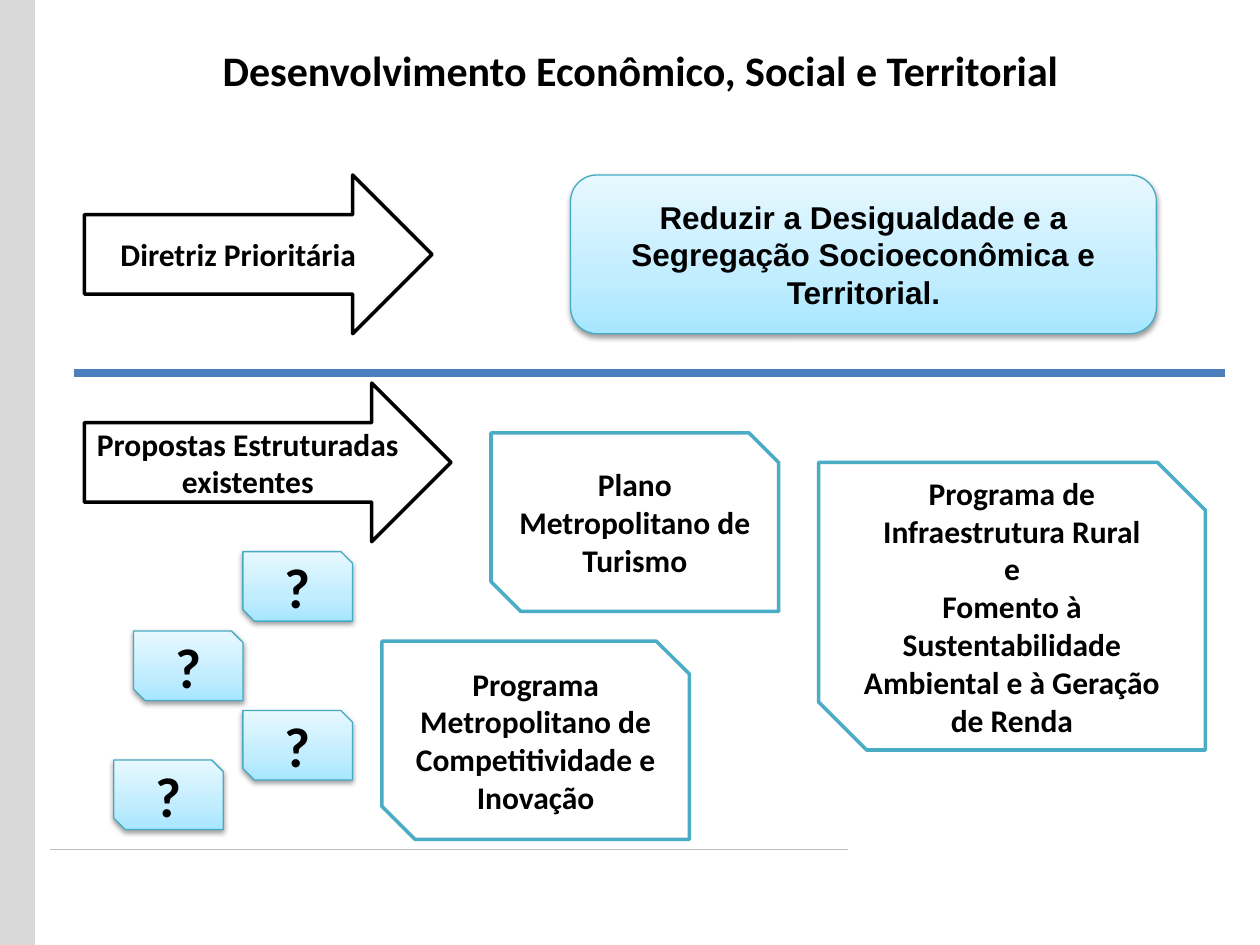
from copy import deepcopy

from lxml.etree import SubElement
from pptx import Presentation
from pptx.dml.color import RGBColor
from pptx.enum.shapes import MSO_CONNECTOR, MSO_SHAPE
from pptx.enum.text import MSO_ANCHOR, MSO_AUTO_SIZE, PP_ALIGN
from pptx.oxml.ns import qn
from pptx.util import Pt

STOPS = [(0, "A7E6FF"), (0.35, "C1EDFF"), (1, "E7F8FF")]
SNIP = MSO_SHAPE.SNIP_2_DIAG_RECTANGLE
ARROW = MSO_SHAPE.RIGHT_ARROW


def color(code):
    return RGBColor.from_string(code)


def write(frame, text, size=18, font="Calibri", anchor=MSO_ANCHOR.MIDDLE):
    """Put bold, centred text in a frame, one paragraph per line."""
    frame.word_wrap = True
    frame.auto_size = MSO_AUTO_SIZE.NONE
    frame.vertical_anchor = anchor
    frame.text = text
    for para in frame.paragraphs:
        para.alignment = PP_ALIGN.CENTER
        para.font.size = Pt(size)
        para.font.name = font
        para.font.bold = True
        para.font.color.rgb = color("000000")


def add_box(slide, kind, area, fill="FFFFFF", line=None, width=2):
    box = slide.shapes.add_shape(kind, *map(Pt, area))
    box.shadow.inherit = False
    box.fill.solid()
    box.fill.fore_color.rgb = color(fill)
    if line:
        box.line.color.rgb = color(line)
        box.line.width = Pt(width)
    else:
        box.line.fill.background()
    return box


def add_glow(slide, kind, area):
    """Add a box with a blue gradient and a soft shadow below it."""
    box = add_box(slide, kind, area, line="46AAC5", width=0.75)
    box.fill.gradient()
    box.fill.gradient_angle = 90
    first = box.fill.gradient_stops[0]._gs
    first.addnext(deepcopy(first))
    for stop, (place, code) in zip(box.fill.gradient_stops, STOPS):
        stop.position = place
        stop.color.rgb = color(code)
    effects = box._element.spPr.find(qn("a:effectLst"))
    shade = SubElement(effects, qn("a:outerShdw"), blurRad=str(Pt(3.1)),
                       dist=str(Pt(1.6)), dir="5400000", rotWithShape="0")
    black = SubElement(shade, qn("a:srgbClr"), val="000000")
    SubElement(black, qn("a:alpha"), val="38000")
    return box


def add_rule(slide, left, right, top, code, width):
    rule = slide.shapes.add_connector(
        MSO_CONNECTOR.STRAIGHT, Pt(left), Pt(top), Pt(right), Pt(top))
    rule.line.color.rgb = color(code)
    rule.line.width = Pt(width)
    SubElement(rule._element.spPr, qn("a:effectLst"))


def main():
    deck = Presentation()
    deck.slide_width, deck.slide_height = Pt(720), Pt(540)
    slide = deck.slides.add_slide(deck.slide_layouts[5])

    # Page frame: footer rule and side band
    add_rule(slide, 28.4, 484.4, 485.3, "BFBFBF", 0.75)
    add_box(slide, MSO_SHAPE.RECTANGLE, (0, 0, 20, 540), fill="D9D9D9")

    # Title
    title = slide.shapes.title
    title.left, title.top = Pt(20), Pt(21.6)
    title.width, title.height = Pt(692), Pt(55.4)
    write(title.text_frame, "Desenvolvimento Econômico, Social e Territorial",
          size=24, anchor=MSO_ANCHOR.TOP)

    # Priority guideline
    goal = add_glow(slide, MSO_SHAPE.ROUNDED_RECTANGLE,
                    (326, 100, 334.8, 90.7))
    write(goal.text_frame, "Reduzir a Desigualdade e a Segregação "
          "Socioeconômica e Territorial.", font="Arial")

    # Arrows and proposals
    outlines = [
        (ARROW, (48.2, 100, 198.7, 90.7), "000000", "Diretriz Prioritária"),
        (ARROW, (48.2, 218.9, 209.6, 90.7), "000000",
         "Propostas Estruturadas existentes"),
        (SNIP, (280.6, 247.4, 164.4, 102), "4BACC6",
         "Plano Metropolitano de Turismo"),
        (SNIP, (467.8, 264.2, 221, 164.4), "4BACC6",
         "Programa de Infraestrutura Rural\ne\n"
         "Fomento à Sustentabilidade Ambiental e à Geração de Renda"),
        (SNIP, (218.2, 366.4, 175.8, 113.2), "4BACC6",
         "Programa Metropolitano de Competitividade e Inovação"),
    ]
    for kind, area, line, text in outlines:
        write(add_box(slide, kind, area, line=line).text_frame, text)

    # Divider between guideline and proposals
    add_rule(slide, 42.5, 700, 213.1, "4B7EBC", 4.5)

    # Open questions
    for left, top in [(76.3, 360.6), (138.8, 315.2),
                      (65, 434.3), (138.8, 406)]:
        mark = add_glow(slide, SNIP, (left, top, 62.6, 39.7))
        write(mark.text_frame, "?", size=32)

    deck.save("out.pptx")


if __name__ == "__main__":
    main()
